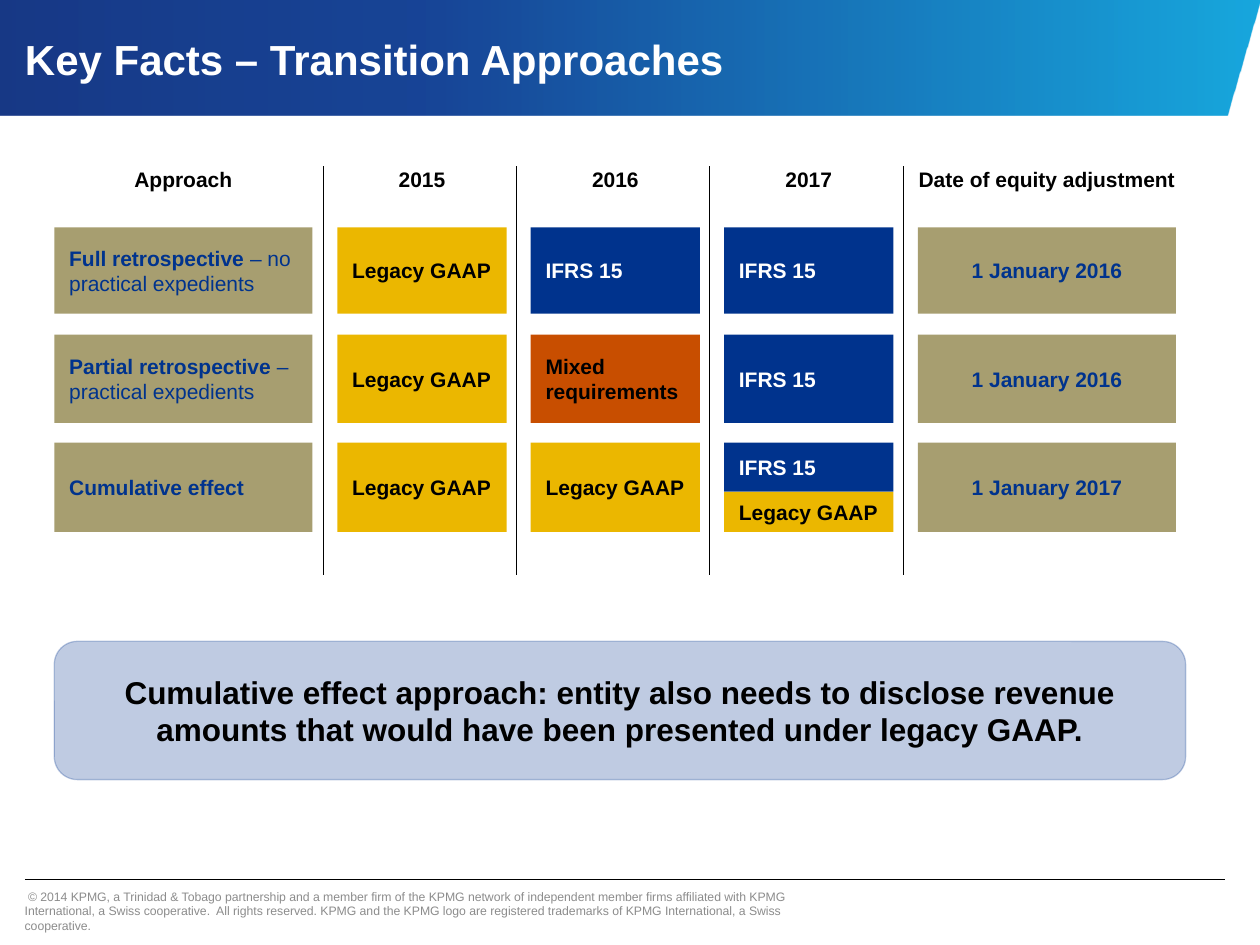
from lxml import etree
from pptx import Presentation
from pptx import util as u
from pptx.dml import color
from pptx.enum import shapes, text
from pptx.oxml import ns

COLORS = {
    "navy": "00257A", "blue": "00338D", "cyan": "009FDA",
    "olive": "A79E70", "yellow": "EBB700", "orange": "C84E00",
    "black": "000000", "white": "FFFFFF", "grey": "8C8C8C",
}
LEFT, CENTER = text.PP_ALIGN.LEFT, text.PP_ALIGN.CENTER


def rgb(name):
    return color.RGBColor.from_string(COLORS[name])


def add_xml(parent, tag, **attributes):
    return etree.SubElement(parent, ns.qn(tag), attributes)


def set_alpha(shape, percent):
    for element in shape._element.spPr.iter(ns.qn("a:srgbClr")):
        add_xml(element, "a:alpha", val=str(percent * 1000))


class SlideBuilder:
    font = "Arial"

    def __init__(self, slide):
        self.slide = slide

    def set_text(self, shape, runs, size, tint, bold=True, align=LEFT,
                 margins=(0, 0), anchor=text.MSO_ANCHOR.MIDDLE):
        frame = shape.text_frame
        frame.word_wrap = True
        frame.auto_size = text.MSO_AUTO_SIZE.NONE
        frame.vertical_anchor = anchor
        frame.margin_left = frame.margin_right = u.Pt(margins[0])
        frame.margin_top = frame.margin_bottom = u.Pt(margins[1])
        paragraph = frame.paragraphs[0]
        paragraph.alignment = align
        paragraph.font.name = self.font
        paragraph.font.size = u.Pt(size)
        paragraph.font.color.rgb = rgb(tint)
        paragraph.font.bold = bold
        for index, content in enumerate(runs):
            run = paragraph.add_run()
            run.text = content
            if index:
                run.font.bold = False

    def banner(self, points, stops):
        builder = self.slide.shapes.build_freeform(
            u.Pt(points[0][0]), u.Pt(points[0][1]))
        builder.add_line_segments([(u.Pt(x), u.Pt(y)) for x, y in points[1:]])
        shape = builder.convert_to_shape()
        shape.shadow.inherit = False
        shape.line.fill.background()
        shape.fill.gradient()
        shape.fill.gradient_angle = 0
        stop_list = shape._element.spPr.find(".//" + ns.qn("a:gsLst"))
        for stop in list(stop_list):
            stop_list.remove(stop)
        for position, name in stops:
            stop = add_xml(stop_list, "a:gs", pos=str(position * 1000))
            add_xml(stop, "a:srgbClr", val=COLORS[name])
        set_alpha(shape, 90)

    def title(self, content, left, top, width, height):
        shape = self.slide.shapes.title
        self.slide.shapes._spTree.append(shape._element)
        shape.left, shape.top = u.Pt(left), u.Pt(top)
        shape.width, shape.height = u.Pt(width), u.Pt(height)
        self.set_text(shape, [content], 24, "white")

    def label(self, content, left, top, width, height, size, tint, **style):
        shape = self.slide.shapes.add_textbox(
            u.Pt(left), u.Pt(top), u.Pt(width), u.Pt(height))
        self.set_text(shape, [content], size, tint, **style)

    def box(self, runs, left, top, width, height, fill, tint, align=LEFT):
        shape = self.slide.shapes.add_shape(
            shapes.MSO_SHAPE.RECTANGLE,
            u.Pt(left), u.Pt(top), u.Pt(width), u.Pt(height))
        shape.shadow.inherit = False
        shape.fill.solid()
        shape.fill.fore_color.rgb = rgb(fill)
        shape.line.fill.background()
        self.set_text(shape, runs, 12, tint, align=align, margins=(8.5, 0))

    def callout(self, content, left, top, width, height):
        shape = self.slide.shapes.add_shape(
            shapes.MSO_SHAPE.ROUNDED_RECTANGLE,
            u.Pt(left), u.Pt(top), u.Pt(width), u.Pt(height))
        shape.shadow.inherit = False
        shape.fill.solid()
        shape.fill.fore_color.rgb = rgb("blue")
        shape.line.color.rgb = rgb("blue")
        shape.line.width = u.Pt(0.75)
        set_alpha(shape, 25)
        self.set_text(shape, [content], 18, "black", align=CENTER)

    def rule(self, x1, y1, x2, y2, weight):
        line = self.slide.shapes.add_connector(
            shapes.MSO_CONNECTOR.STRAIGHT,
            u.Pt(x1), u.Pt(y1), u.Pt(x2), u.Pt(y2))
        line.line.color.rgb = rgb("black")
        line.line.width = u.Pt(weight)
        add_xml(line._element.spPr, "a:effectLst")


COLUMNS = [
    ("Approach", 31, 147.5),
    ("2015", 192.75, 96.75),
    ("2016", 303.25, 96.75),
    ("2017", 413.75, 96.75),
    ("Date of equity adjustment", 524.5, 147.5),
]
ROWS = [(130, 49.25), (191.25, 50.5), (253, 51)]
LEGACY = ("Legacy GAAP", "yellow", "black")
IFRS = ("IFRS 15", "blue", "white")
MIXED = ("Mixed requirements", "orange", "black")
APPROACHES = [
    (["Full retrospective ", "– no practical expedients"],
     [[LEGACY], [IFRS], [IFRS]], "1 January 2016"),
    (["Partial retrospective ", "– practical expedients"],
     [[LEGACY], [MIXED], [IFRS]], "1 January 2016"),
    (["Cumulative effect"],
     [[LEGACY], [LEGACY], [IFRS, LEGACY]], "1 January 2017"),
]
SPLIT_SHARES = {1: [1], 2: [0.55, 0.45]}


def main():
    presentation = Presentation()
    presentation.slide_width, presentation.slide_height = u.Pt(720), u.Pt(540)
    slide = presentation.slides.add_slide(presentation.slide_layouts[5])
    builder = SlideBuilder(slide)

    builder.banner([(0, 0), (0, 65.75), (700.75, 65.75), (720, 0), (0, 0)],
                   [(0, "navy"), (35, "blue"), (100, "cyan")])
    builder.title("Key Facts – Transition Approaches", 14.25, 0, 543.5, 66.5)

    for name, left, width in COLUMNS:
        builder.label(name, left, 95.25, width, 14.5, 12, "black",
                      align=CENTER, anchor=text.MSO_ANCHOR.TOP)
    for _, left, _ in COLUMNS[1:]:
        builder.rule(left - 8.25, 95, left - 8.25, 328.5, 0.2)

    _, first_left, first_width = COLUMNS[0]
    _, last_left, last_width = COLUMNS[-1]
    for (top, height), (approach, years, date) in zip(ROWS, APPROACHES):
        builder.box(approach, first_left, top, first_width, height,
                    "olive", "blue")
        for (_, left, width), parts in zip(COLUMNS[1:-1], years):
            part_top = top
            for part, share in zip(parts, SPLIT_SHARES[len(parts)]):
                content, fill, tint = part
                builder.box([content], left, part_top, width, height * share,
                            fill, tint)
                part_top += height * share
        builder.box([date], last_left, top, last_width, height,
                    "olive", "blue", CENTER)

    builder.callout(
        "Cumulative effect approach: entity also needs to disclose revenue "
        "amounts that would have been presented under legacy GAAP.",
        31, 366.5, 646.5, 79)

    builder.rule(14.25, 502.5, 700, 502.5, 0.25)
    builder.label(
        " © 2014 KPMG, a Trinidad & Tobago partnership and a member firm of "
        "the KPMG network of independent member firms affiliated with KPMG "
        "International, a Swiss cooperative.  All rights reserved. KPMG and "
        "the KPMG logo are registered trademarks of KPMG International, a "
        "Swiss cooperative.",
        7, 502.5, 486, 36, 7, "grey", bold=False, margins=(7.2, 3.6))

    presentation.save("out.pptx")


if __name__ == "__main__":
    main()
